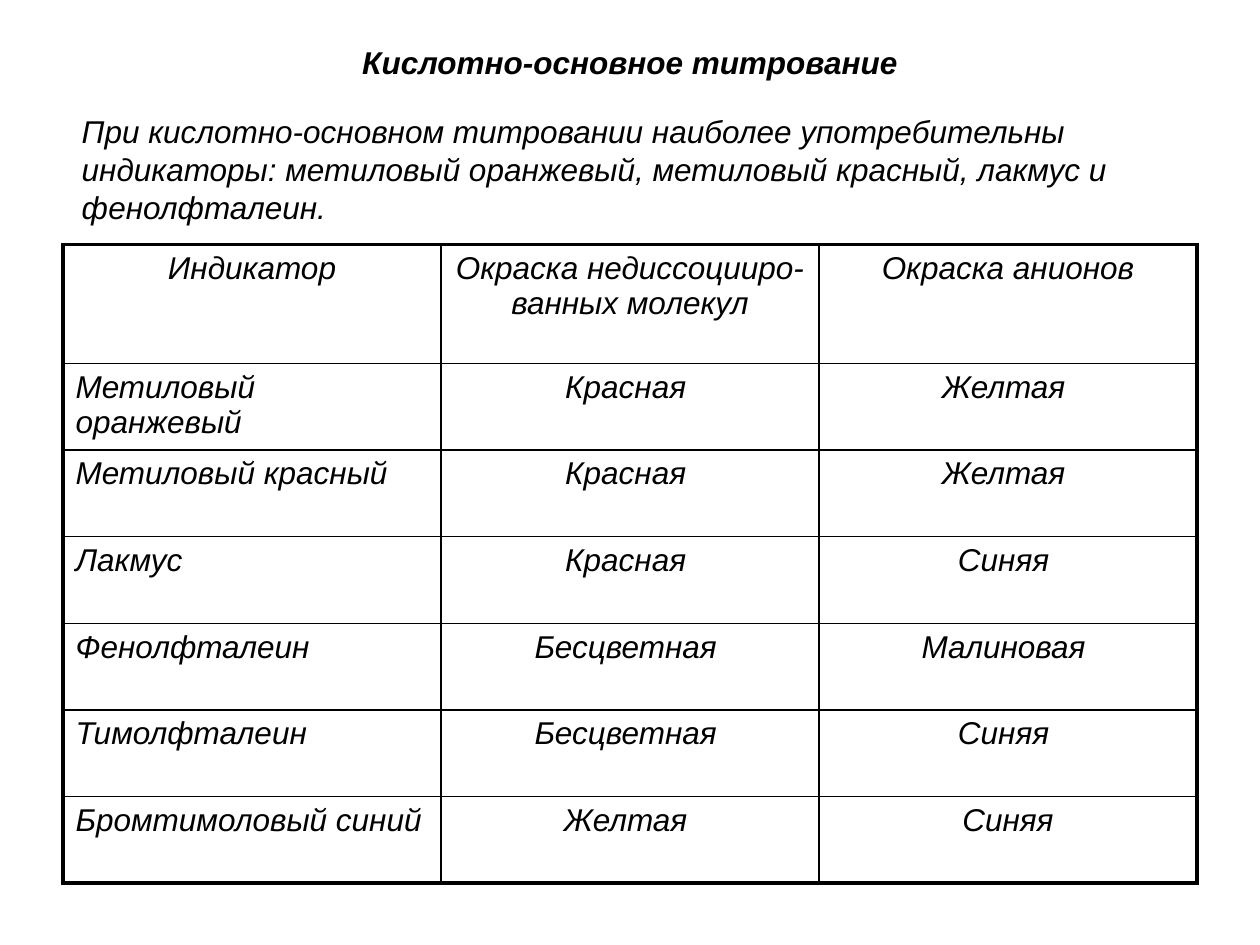
from lxml.etree import SubElement
from pptx import Presentation
from pptx.dml.color import RGBColor
from pptx.enum.text import MSO_ANCHOR, PP_ALIGN
from pptx.oxml.ns import qn
from pptx.util import Pt

BLACK = "000000"
THIN, THICK = 1, 2.25
HEADER_HEIGHT, ROW_HEIGHT, COLUMN_WIDTH = 68, 49.5, 216

TITLE = "Кислотно-основное титрование"
INTRO = (
    "При кислотно-основном титровании наиболее употребительны индикаторы: "
    "метиловый оранжевый, метиловый красный, лакмус и фенолфталеин."
)
INDICATORS = [
    ("Индикатор", "Окраска недиссоцииро- ванных молекул", "Окраска анионов"),
    ("Метиловый оранжевый", "Красная ", "Желтая "),
    ("Метиловый красный", "Красная ", "Желтая "),
    ("Лакмус", "Красная ", "Синяя "),
    ("Фенолфталеин", "Бесцветная ", "Малиновая "),
    ("Тимолфталеин", "Бесцветная ", "Синяя "),
    ("Бромтимоловый синий", "Желтая ", "Синяя"),
]


def color(value):
    return RGBColor.from_string(value)


def write(frame, text, align=PP_ALIGN.LEFT, bold=False):
    frame.word_wrap = True
    paragraph = frame.paragraphs[0]
    paragraph.alignment = align
    run = paragraph.add_run()
    run.text = text
    font_format = {"name": "Arial", "size": Pt(18), "bold": bold, "italic": True}
    for name, value in font_format.items():
        setattr(run.font, name, value)
    run.font.color.rgb = color(BLACK)


def add_title(slide):
    title = slide.shapes.title
    place = {"left": 36, "top": 21.6, "width": 648, "height": 27.4}
    for name, value in place.items():
        setattr(title, name, Pt(value))
    title.text_frame.vertical_anchor = MSO_ANCHOR.MIDDLE
    write(title.text_frame, TITLE, PP_ALIGN.CENTER, bold=True)


def add_intro(slide):
    intro = slide.shapes.add_textbox(Pt(39.6), Pt(60.5), Pt(680.4), Pt(72))
    write(intro.text_frame, INTRO)


def set_borders(cell, widths):
    """Draw solid borders; widths maps each side (L, R, T, B) to points."""
    properties = cell._tc.get_or_add_tcPr()
    for side, width in widths.items():
        line = SubElement(properties, qn(f"a:ln{side}"), w=str(Pt(width)))
        fill = SubElement(line, qn("a:solidFill"))
        SubElement(fill, qn("a:srgbClr"), val=BLACK)


def add_indicator_table(slide):
    row_count, column_count = len(INDICATORS), len(INDICATORS[0])
    height = HEADER_HEIGHT + ROW_HEIGHT * (row_count - 1)
    table = slide.shapes.add_table(
        row_count, column_count, Pt(36), Pt(139.7),
        Pt(COLUMN_WIDTH * column_count), Pt(height),
    ).table
    table.first_row = table.horz_banding = False
    for column in table.columns:
        column.width = Pt(COLUMN_WIDTH)
    for r, texts in enumerate(INDICATORS):
        table.rows[r].height = Pt(ROW_HEIGHT if r else HEADER_HEIGHT)
        for c, text in enumerate(texts):
            cell = table.cell(r, c)
            outer = {
                "L": c == 0,
                "R": c == column_count - 1,
                "T": r == 0,
                "B": r == row_count - 1,
            }
            set_borders(cell, {s: THICK if edge else THIN for s, edge in outer.items()})
            cell.fill.background()
            is_name = r > 0 and c == 0
            write(cell.text_frame, text, PP_ALIGN.LEFT if is_name else PP_ALIGN.CENTER)


def main():
    presentation = Presentation()
    presentation.slide_width, presentation.slide_height = Pt(720), Pt(540)
    slide = presentation.slides.add_slide(presentation.slide_layouts[5])
    add_title(slide)
    add_indicator_table(slide)
    add_intro(slide)
    presentation.save("out.pptx")


if __name__ == "__main__":
    main()
